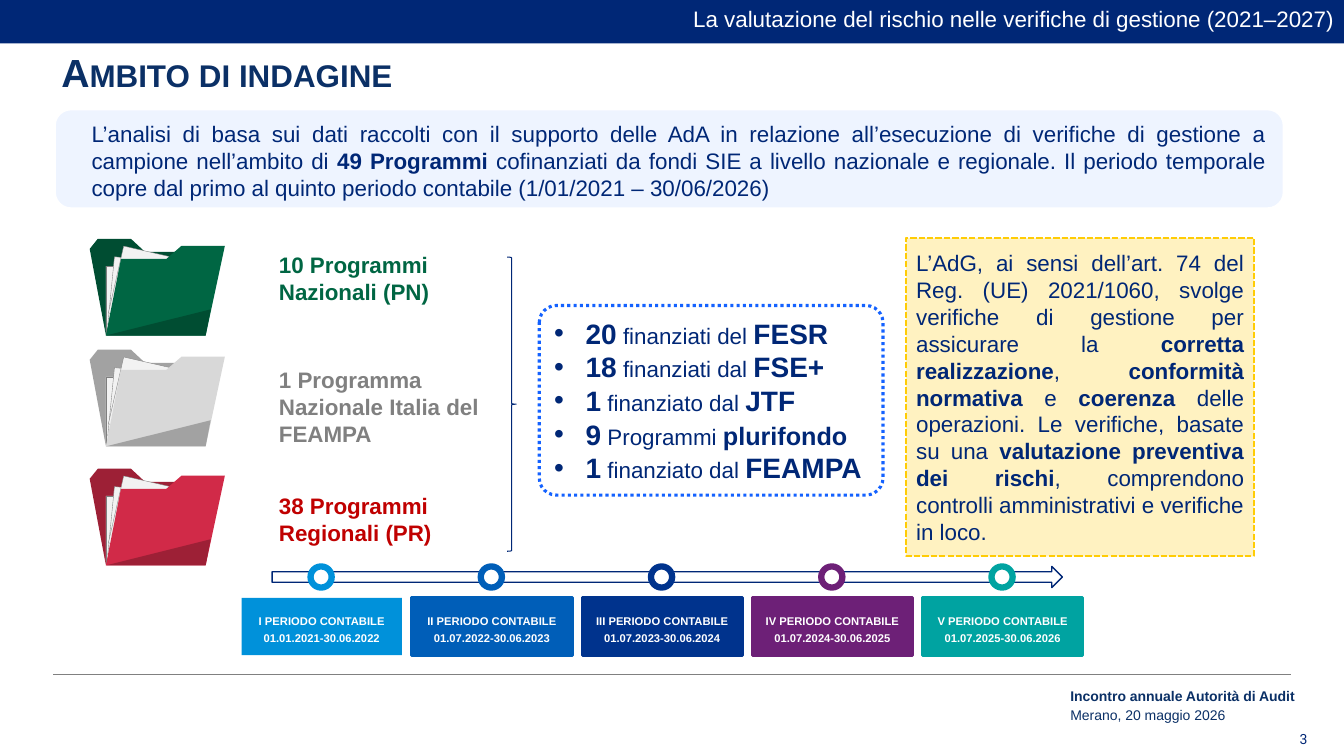
from lxml.etree import SubElement
from pptx import Presentation
from pptx.dml.color import RGBColor
from pptx.enum.dml import MSO_LINE as DASH
from pptx.enum.shapes import MSO_CONNECTOR, MSO_SHAPE as SHAPE
from pptx.enum.text import MSO_ANCHOR as ANCHOR, PP_ALIGN as ALIGN
from pptx.oxml.ns import qn
from pptx.util import Pt

NAVY = RGBColor(0x00, 0x27, 0x76)
INK = RGBColor(0x0B, 0x30, 0x66)
WHITE = RGBColor(0xFF, 0xFF, 0xFF)
GREY = RGBColor(0x80, 0x80, 0x80)
PALE_BLUE = RGBColor(0xD9, 0xE6, 0xFF)
BRIGHT_BLUE = RGBColor(0x14, 0x62, 0xFF)
CREAM = RGBColor(0xFF, 0xF2, 0xC1)
YELLOW = RGBColor(0xFF, 0xCC, 0x05)
PAPER = RGBColor(0xF2, 0xF2, 0xF2)
PAPER_EDGE = RGBColor(0x7F, 0x7F, 0x7F)
GREEN = RGBColor(0x00, 0x66, 0x43)
DARK_GREEN = RGBColor(0x00, 0x4D, 0x32)
SILVER = RGBColor(0xD8, 0xD8, 0xD8)
DARK_SILVER = RGBColor(0xA2, 0xA2, 0xA2)
CRIMSON = RGBColor(0xD1, 0x2A, 0x48)
DARK_CRIMSON = RGBColor(0x9D, 0x20, 0x36)
RED = RGBColor(0xC0, 0x00, 0x00)
AZURE = RGBColor(0x00, 0x91, 0xDA)
BLUE = RGBColor(0x00, 0x5E, 0xB8)
DEEP_BLUE = RGBColor(0x00, 0x33, 0x8D)
PURPLE = RGBColor(0x6D, 0x20, 0x77)
TEAL = RGBColor(0x00, 0xA3, 0xA1)

FOLDER_LEFT = 64.1
FOLDER_BACK = [(29.5, 0), (39.6, 9.4), (72, 9.4), (83, 68.4), (11.5, 68.4), (0, 7.2), (5.8, 0)]
FOLDER_FRONT = [(65.5, 5), (96.5, 5), (82.8, 69.1), (11.5, 69.1), (22.3, 14.4), (54.7, 14.4)]
FOLDER_SHADE = [(86.4, 50.4), (82.8, 69.1), (11.5, 69.1)]
FOLDER_SHEETS = [(11.5, 19.4, 0), (15.1, 15.8, 5.6), (18, 11.7, 12.9)]

PROGRAMMES = [
    ("10 Programmi Nazionali (PN)", 170.6, 175.7, GREEN, GREEN, DARK_GREEN),
    ("1 Programma Nazionale Italia del FEAMPA", 249.8, 267.1, GREY, SILVER, DARK_SILVER),
    ("38 Programmi Regionali (PR)", 334.8, 347.8, RED, CRIMSON, DARK_CRIMSON),
]
FUNDS = [
    ("**20** finanziati del **FESR**", 20),
    ("**18** finanziati dal **FSE+**", 20),
    ("**1** finanziato dal **JTF**", 20),
    ("**9** Programmi **plurifondo**", 18),
    ("**1** finanziato dal **FEAMPA**", 20),
]
PERIODS = [
    ("I", "01.01.2021-30.06.2022", AZURE),
    ("II", "01.07.2022-30.06.2023", BLUE),
    ("III", "01.07.2023-30.06.2024", DEEP_BLUE),
    ("IV", "01.07.2024-30.06.2025", PURPLE),
    ("V", "01.07.2025-30.06.2026", TEAL),
]
PERIOD_STEP = 121.6
INTRO = (
    "L’analisi di basa sui dati raccolti con il supporto delle AdA in relazione all’esecuzione "
    "di verifiche di gestione a campione nell’ambito di **49 Programmi** cofinanziati da fondi SIE "
    "a livello nazionale e regionale. Il periodo temporale copre dal primo al quinto periodo "
    "contabile (1/01/2021 – 30/06/2026)"
)
AUTHORITY_ROLE = (
    "L’AdG, ai sensi dell’art. 74 del Reg. (UE) 2021/1060, svolge verifiche di gestione per "
    "assicurare la **corretta realizzazione**, **conformità normativa **e **coerenza **delle "
    "operazioni. Le verifiche, basate su una **valutazione preventiva dei rischi**, comprendono "
    "controlli amministrativi e verifiche in loco."
)


def paint(shape, fill=None, line=None, width=1, dash=None):
    """Set the fill and outline of a shape and remove its shadow."""
    shape.shadow.inherit = False
    if fill is None:
        shape.fill.background()
    else:
        shape.fill.solid()
        shape.fill.fore_color.rgb = fill
    if line is None:
        shape.line.fill.background()
    else:
        shape.line.color.rgb = line
        shape.line.width = Pt(width)
        if dash is not None:
            shape.line.dash_style = dash


def add_block(shapes, kind, box, fill=None, line=None, width=1, dash=None):
    """Add a painted preset shape."""
    block = shapes.add_shape(kind, *map(Pt, box))
    paint(block, fill, line, width, dash)
    return block


def add_label(slide, box, anchor=ANCHOR.TOP):
    """Add a wrapping text box and return its frame."""
    frame = slide.shapes.add_textbox(*map(Pt, box)).text_frame
    frame.word_wrap = True
    frame.vertical_anchor = anchor
    return frame


def write(paragraph, text, size, color, align=ALIGN.LEFT, bold_size=None, font="Arial"):
    """Fill a paragraph, with bold for the parts between double asterisks."""
    paragraph.alignment = align
    for index, part in enumerate(text.split("**")):
        if part:
            bold = index % 2 == 1
            run = paragraph.add_run()
            run.text = part
            run.font.name = font
            run.font.size = Pt(bold_size if bold and bold_size else size)
            run.font.bold = bold
            run.font.color.rgb = color


def add_bullet(paragraph):
    """Give a paragraph a hanging round bullet."""
    properties = paragraph._p.get_or_add_pPr()
    properties.set("marL", str(Pt(22.5)))
    properties.set("indent", str(-Pt(22.5)))
    SubElement(properties, qn("a:buFont")).set("typeface", "Arial")
    SubElement(properties, qn("a:buChar")).set("char", "•")


def add_outline(shapes, points, top, fill):
    """Add a filled polygon placed on a folder."""
    corners = [(Pt(FOLDER_LEFT + x), Pt(top + y)) for x, y in points]
    builder = shapes.build_freeform(*corners[0], scale=1.0)
    builder.add_line_segments(corners[1:], close=True)
    paint(builder.convert_to_shape(), fill)


def add_folder(slide, top, front, shade):
    """Draw an open folder holding three sheets."""
    parts = slide.shapes.add_group_shape().shapes
    add_outline(parts, FOLDER_BACK, top, shade)
    for x, y, angle in FOLDER_SHEETS:
        box = (FOLDER_LEFT + x, top + y, 64.1, 49)
        add_block(parts, SHAPE.RECTANGLE, box, PAPER, PAPER_EDGE, 0.25).rotation = angle
    add_outline(parts, FOLDER_FRONT, top, front)
    add_outline(parts, FOLDER_SHADE, top, shade)


def add_header(slide):
    """Add the top band, the title and the introduction."""
    band = add_block(slide.shapes, SHAPE.RECTANGLE, (0, 0, 960, 31), NAVY).text_frame
    band.word_wrap = True
    band.vertical_anchor = ANCHOR.TOP
    write(band.paragraphs[0], "La valutazione del rischio nelle verifiche di gestione (2021–2027)",
          16, WHITE, ALIGN.RIGHT)
    title = add_label(slide, (36.7, 31, 803, 41.8)).paragraphs[0]
    write(title, "**Ambito di indagine**", 28, INK)
    title.runs[0].font._element.set("cap", "small")
    panel = add_block(slide.shapes, SHAPE.FLOWCHART_ALTERNATE_PROCESS,
                      (38.9, 77.8, 878.4, 71.3), PALE_BLUE, WHITE, 2)
    tint = panel._element.spPr.find(qn("a:solidFill"))[0]
    SubElement(tint, qn("a:alpha")).set("val", "43000")
    write(add_label(slide, (58.3, 82.1, 853.2, 65.5)).paragraphs[0], INTRO, 16, NAVY, ALIGN.JUSTIFY)


def add_funds(slide):
    """Add the brace and the bulleted list of funds."""
    add_block(slide.shapes, SHAPE.RIGHT_BRACE, (362.2, 183.6, 6.5, 210.2), None, NAVY, 0.75)
    panel = add_block(slide.shapes, SHAPE.ROUNDED_RECTANGLE, (385.2, 218.2, 245.5, 135.4),
                      WHITE, BRIGHT_BLUE, 2.25, DASH.ROUND_DOT)
    panel.adjustments[0] = 0.09
    frame = panel.text_frame
    frame.word_wrap = True
    frame.vertical_anchor = ANCHOR.MIDDLE
    for index, (fund, name_size) in enumerate(FUNDS):
        paragraph = frame.add_paragraph() if index else frame.paragraphs[0]
        add_bullet(paragraph)
        write(paragraph, fund, 16, NAVY, bold_size=name_size)
        paragraph.runs[0].font.size = Pt(20)


def add_period(slide, index, numeral, dates, color):
    """Add one accounting period with its marker on the timeline."""
    left = 172.6 + index * PERIOD_STEP
    card = add_block(slide.shapes, SHAPE.RECTANGLE, (left, 427, 114.5, 41),
                     color, color if index else None, 2)
    frame = card.text_frame
    frame.word_wrap = True
    frame.vertical_anchor = ANCHOR.MIDDLE
    frame.margin_top, frame.margin_bottom = Pt(7.2), Pt(2.9)
    write(frame.paragraphs[0], f"**{numeral} PERIODO CONTABILE**", 8, WHITE, ALIGN.CENTER)
    span = frame.add_paragraph()
    span.space_before = Pt(3)
    write(span, f"**{dates}**", 8, WHITE, ALIGN.CENTER)
    add_block(slide.shapes, SHAPE.OVAL, (left + 49.2, 404.6, 15.1, 15.1), WHITE, color, 4.5)


def add_footer(slide):
    """Add the rule, the event details and the slide number."""
    rule = slide.shapes.add_connector(MSO_CONNECTOR.STRAIGHT, *map(Pt, (38.2, 481.7, 922.3, 481.7)))
    rule.line.color.rgb = GREY
    rule.line.width = Pt(0.75)
    SubElement(rule._element.spPr, qn("a:effectLst"))
    event = add_label(slide, (757.4, 487.4, 187.9, 31))
    write(event.paragraphs[0], "**Incontro annuale Autorità di Audit**", 10, INK)
    place = event.add_paragraph()
    place.space_before = Pt(2)
    write(place, "Merano, 20 maggio 2026", 10, INK)
    number = add_label(slide, (635.8, 520.6, 298, 14.4), ANCHOR.MIDDLE)
    number.margin_left = number.margin_right = number.margin_top = number.margin_bottom = 0
    write(number.paragraphs[0], "3", 10, NAVY, ALIGN.RIGHT, font="Roboto")


def main():
    """Build the slide and save it."""
    deck = Presentation()
    deck.slide_width, deck.slide_height = Pt(960), Pt(540)
    slide = deck.slides.add_slide(deck.slide_layouts[6])
    add_footer(slide)
    add_header(slide)
    for text, folder_top, label_top, color, front, shade in PROGRAMMES:
        add_folder(slide, folder_top, front, shade)
        label = add_label(slide, (192.2, label_top, 177.1, 46.1), ANCHOR.MIDDLE)
        write(label.paragraphs[0], f"**{text}**", 16, color)
    add_funds(slide)
    role = add_block(slide.shapes, SHAPE.RECTANGLE, (647.3, 169.9, 248.4, 227.5),
                     CREAM, YELLOW, 1.5, DASH.SQUARE_DOT).text_frame
    role.word_wrap = True
    role.vertical_anchor = ANCHOR.MIDDLE
    write(role.paragraphs[0], AUTHORITY_ROLE, 16, NAVY, ALIGN.JUSTIFY)
    add_block(slide.shapes, SHAPE.RIGHT_ARROW, (194.4, 404.6, 564.5, 15.1), WHITE, NAVY, 1)
    for index, period in enumerate(PERIODS):
        add_period(slide, index, *period)
    deck.save("out.pptx")


if __name__ == "__main__":
    main()
